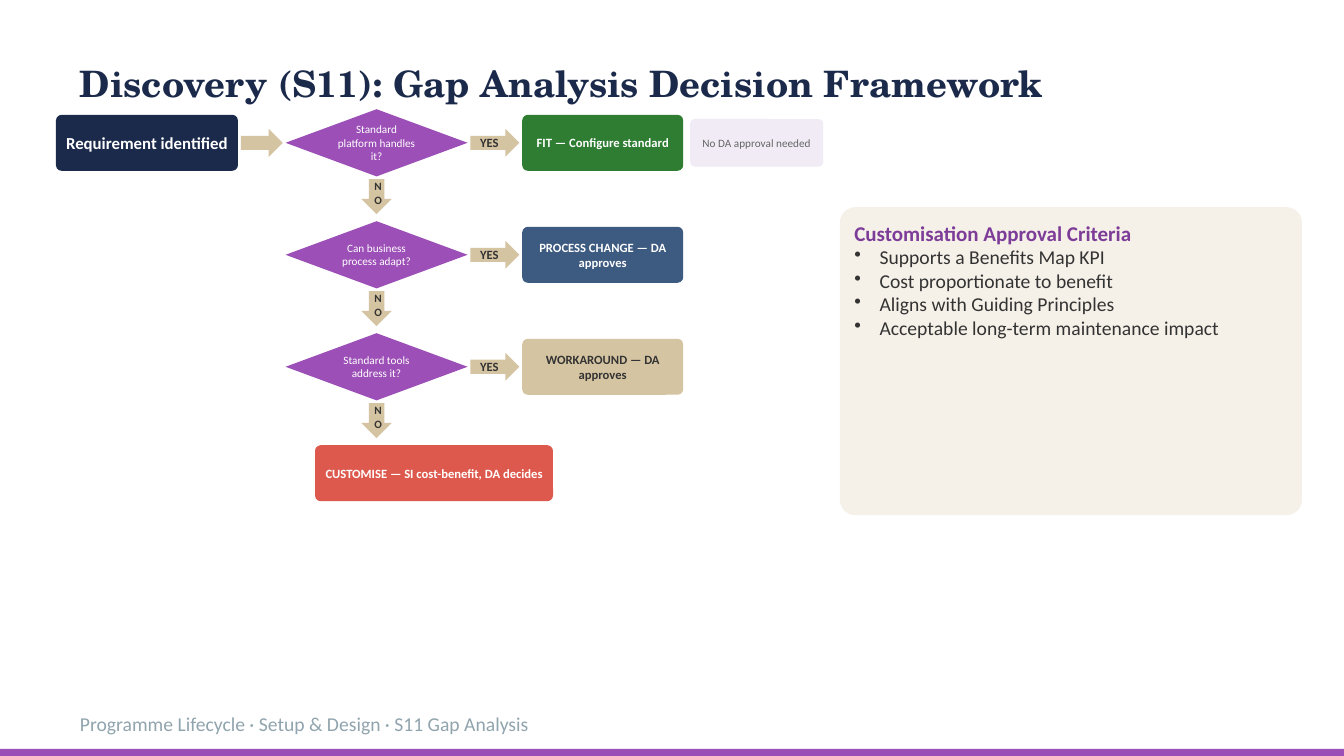
import dataclasses

import pptx
import pptx.dml.color
import pptx.enum.shapes
import pptx.enum.text
import pptx.oxml.ns
import pptx.util
from lxml import etree

Pt = pptx.util.Pt
SHAPE = pptx.enum.shapes.MSO_SHAPE
ALIGN = pptx.enum.text.PP_ALIGN
ANCHOR = pptx.enum.text.MSO_ANCHOR


@dataclasses.dataclass(frozen=True)
class Theme:
    heading_font: str = "TeX Gyre Schola"
    body_font: str = "Calibri"
    navy: str = "1B2A4A"
    purple: str = "9C4FB6"
    deep_purple: str = "7D3C98"
    lilac: str = "F0EBF5"
    tan: str = "D5C4A1"
    cream: str = "F5F0E8"
    green: str = "2E7D32"
    blue: str = "3D5A80"
    red: str = "DD594D"
    white: str = "FFFFFF"
    ink: str = "333333"
    grey: str = "666666"
    footer_grey: str = "90A4AE"
    title_size: int = 26
    criteria_heading_size: int = 15
    body_size: int = 14
    start_size: int = 12
    label_size: int = 9
    small_size: int = 8


theme = Theme()


def add_block(kind, left, top, width, height, fill, radius=None):
    shape = slide.shapes.add_shape(kind, Pt(left), Pt(top), Pt(width), Pt(height))
    shape.shadow.inherit = False
    shape.fill.solid()
    shape.fill.fore_color.rgb = pptx.dml.color.RGBColor.from_string(fill)
    shape.line.fill.background()
    if radius is not None:
        shape.adjustments[0] = radius
    return shape


def write(shape, text, size=theme.label_size, color=theme.white, bold=False,
          font=theme.body_font, align=ALIGN.CENTER, anchor=ANCHOR.MIDDLE,
          insets=(6, 3, 6, 3), bullet=False):
    """Add one paragraph to the shape, filling its empty first one if there is one."""
    frame = shape.text_frame
    frame.word_wrap = True
    frame.vertical_anchor = anchor
    (frame.margin_left, frame.margin_top,
     frame.margin_right, frame.margin_bottom) = [Pt(inset) for inset in insets]
    paragraph = frame.add_paragraph() if frame.text else frame.paragraphs[0]
    paragraph.alignment = align
    if bullet:
        properties = paragraph._p.get_or_add_pPr()
        properties.set("marL", str(Pt(18)))
        properties.set("indent", str(-Pt(18)))
        mark = etree.SubElement(properties, pptx.oxml.ns.qn("a:buChar"))
        mark.set("char", "•")
    run = paragraph.add_run()
    run.text = text
    run.font.name = font
    run.font.size = Pt(size)
    run.font.bold = bold
    run.font.color.rgb = pptx.dml.color.RGBColor.from_string(color)


presentation = pptx.Presentation()
presentation.slide_width = Pt(960)
presentation.slide_height = Pt(540)
slide = presentation.slides.add_slide(presentation.slide_layouts[6])

# Title and footer
text_insets = (7.2, 3.6, 7.2, 3.6)
title = slide.shapes.add_textbox(Pt(50), Pt(40), Pt(880), Pt(42))
write(title, "Discovery (S11): Gap Analysis Decision Framework", size=theme.title_size,
      color=theme.navy, bold=True, font=theme.heading_font, align=ALIGN.LEFT,
      anchor=ANCHOR.TOP, insets=text_insets)
add_block(SHAPE.RECTANGLE, 0, 535, 960, 5, theme.purple)
footer = slide.shapes.add_textbox(Pt(50), Pt(505), Pt(600), Pt(22))
write(footer, "Programme Lifecycle · Setup & Design · S11 Gap Analysis", size=theme.body_size,
      color=theme.footer_grey, align=ALIGN.LEFT, anchor=ANCHOR.TOP, insets=text_insets)

# Decision flow: each row is centred on its own line
first_center = 102
row_pitch = 80
box_height = 40
box_radius = 0.1

start = add_block(SHAPE.ROUNDED_RECTANGLE, 40, first_center - box_height / 2, 130, box_height,
                  theme.navy, box_radius)
write(start, "Requirement identified", size=theme.start_size, bold=True)
add_block(SHAPE.RIGHT_ARROW, 172, first_center - 10, 30, 20, theme.tan)

decisions = [
    ("Standard platform handles it?", "FIT — Configure standard", theme.green, theme.white),
    ("Can business process adapt?", "PROCESS CHANGE — DA approves", theme.blue, theme.white),
    ("Standard tools address it?", "WORKAROUND — DA approves", theme.tan, theme.ink),
]
for row, (question, outcome, outcome_fill, outcome_color) in enumerate(decisions):
    center = first_center + row * row_pitch
    diamond = add_block(SHAPE.DIAMOND, 204, center - 24, 130, 48, theme.purple)
    write(diamond, question, size=theme.small_size, insets=(3, 1.5, 3, 1.5))
    yes_arrow = add_block(SHAPE.RIGHT_ARROW, 336, center - 10, 35, 20, theme.tan)
    write(yes_arrow, "YES", color=theme.ink, bold=True, insets=(3, 3.6, 6, 3.6))
    outcome_box = add_block(SHAPE.ROUNDED_RECTANGLE, 373, center - box_height / 2, 115,
                            box_height, outcome_fill, box_radius)
    write(outcome_box, outcome, color=outcome_color, bold=True)
    no_arrow = add_block(SHAPE.DOWN_ARROW, 258, center + 26, 22, 25, theme.tan)
    write(no_arrow, "NO", size=theme.small_size, color=theme.ink, bold=True, insets=text_insets)

customise = add_block(SHAPE.ROUNDED_RECTANGLE, 225, 318, 170, box_height, theme.red, box_radius)
write(customise, "CUSTOMISE — SI cost-benefit, DA decides", bold=True)
approval_note = add_block(SHAPE.ROUNDED_RECTANGLE, 493, first_center - 17, 95, 34,
                          theme.lilac, box_radius)
write(approval_note, "No DA approval needed", size=theme.small_size, color=theme.grey)

# Approval criteria panel
panel = add_block(SHAPE.ROUNDED_RECTANGLE, 600, 148, 330, 220, theme.cream, 0.05)
panel_format = dict(align=ALIGN.LEFT, anchor=ANCHOR.TOP, insets=(7.2, 6, 7.2, 6))
write(panel, "Customisation Approval Criteria", size=theme.criteria_heading_size,
      color=theme.deep_purple, bold=True, **panel_format)
for criterion in [
    "Supports a Benefits Map KPI",
    "Cost proportionate to benefit",
    "Aligns with Guiding Principles",
    "Acceptable long-term maintenance impact",
]:
    write(panel, criterion, size=theme.body_size, color=theme.ink, bullet=True, **panel_format)

presentation.save("out.pptx")
